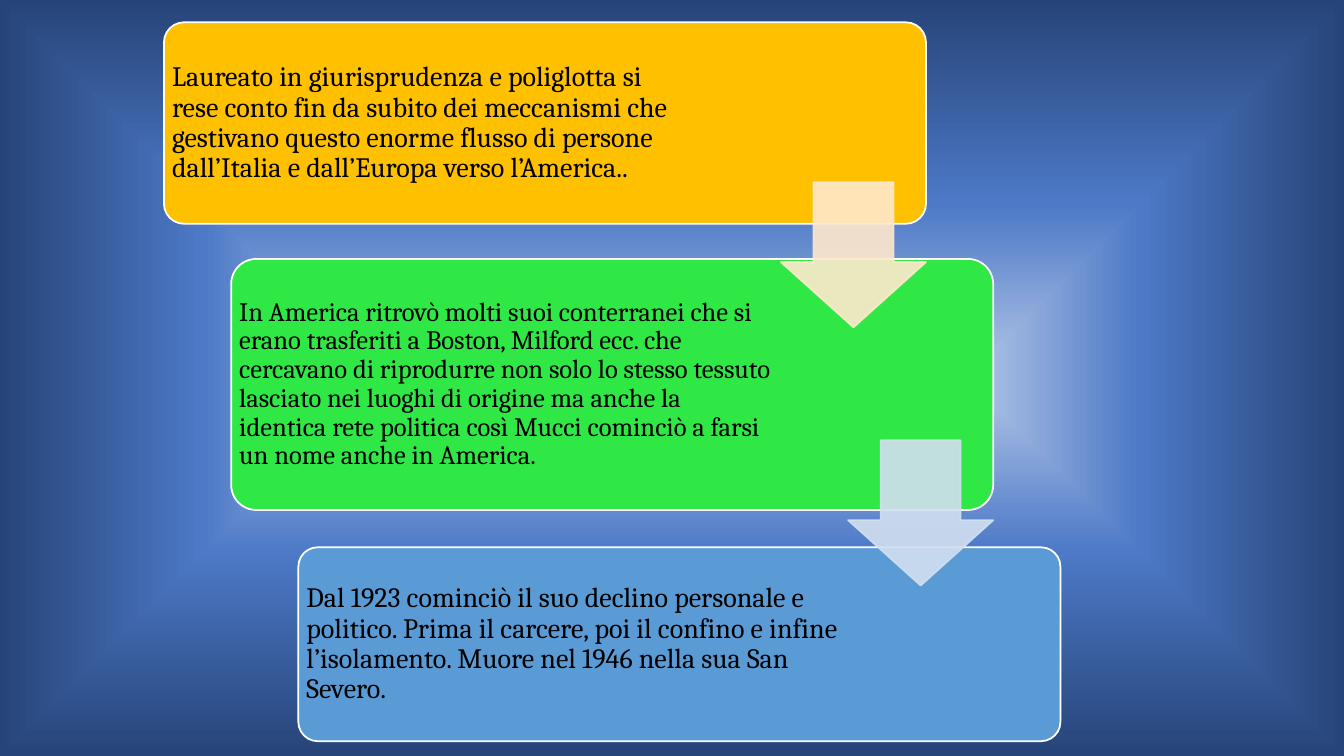
from lxml import etree
from pptx import Presentation
from pptx.dml.color import RGBColor
from pptx.enum.shapes import MSO_SHAPE
from pptx.enum.text import MSO_ANCHOR, PP_ALIGN
from pptx.oxml import parse_xml
from pptx.oxml.ns import nsdecls, qn
from pptx.util import Inches, Pt

ROUNDED = MSO_SHAPE.ROUNDED_RECTANGLE
DOWN_ARROW = MSO_SHAPE.DOWN_ARROW
MIDDLE = MSO_ANCHOR.MIDDLE
LEFT = PP_ALIGN.LEFT

BLACK = RGBColor(0x00, 0x00, 0x00)
WHITE = RGBColor(0xFF, 0xFF, 0xFF)
AMBER = RGBColor(0xFF, 0xC0, 0x00)
GREEN = RGBColor(0x30, 0xE8, 0x45)
BLUE = RGBColor(0x5B, 0x9B, 0xD5)
CREAM = RGBColor(0xFF, 0xE8, 0xCC)
PALE_BLUE = RGBColor(0xD2, 0xDF, 0xF0)
GLOW = RGBColor(0xB4, 0xC7, 0xE7)
MID_BLUE = RGBColor(0x4D, 0x79, 0xC7)
NAVY = RGBColor(0x26, 0x44, 0x78)

# Percentages of the slide's width (horizontal) or height (vertical)
FIRST_LEFT, STEP = 12.2, 5
BOX_WIDTH = 56.7
ARROW_WIDTH, ARROW_HEIGHT = 10.8, 19.2

# Top, height, text width, font size, fill, text
BOXES = [
    (2.95, 26.65, 39.75, 20, AMBER,
     "Laureato in giurisprudenza e poliglotta si rese conto fin da subito dei "
     "meccanismi che gestivano questo enorme flusso di persone dall’Italia e "
     "dall’Europa verso l’America.."),
    (34.25, 33.2, 40.9, 19, GREEN,
     "In America ritrovò molti suoi conterranei che si erano trasferiti a "
     "Boston, Milford ecc. che cercavano di riprodurre non solo lo stesso "
     "tessuto lasciato nei luoghi di origine ma anche la identica rete politica "
     "così Mucci cominciò a farsi un nome anche in America."),
    (72.4, 25.65, 40.9, 20, BLUE,
     "Dal 1923 cominciò il suo declino personale e politico. Prima il carcere, "
     "poi il confino e infine l’isolamento. Muore nel 1946 nella sua San Severo."),
]
# Top, colour
ARROWS = [(24.1, CREAM), (58.25, PALE_BLUE)]


class Deck:
    font = "Cambria"
    line_width = Pt(1.25)
    inset = Inches(0.08)

    def __init__(self, prs):
        self.prs = prs
        self.slide = prs.slides.add_slide(prs.slide_layouts[6])

    def area(self, left, top, width, height):
        w, h = self.prs.slide_width / 100, self.prs.slide_height / 100
        return [int(v) for v in (left * w, top * h, width * w, height * h)]

    def background(self, stops):
        self.slide.background.fill.solid()
        solid = next(self.slide.element.iter(qn("a:solidFill")))
        gs = "".join(f'<a:gs pos="{pos * 1000}"><a:srgbClr val="{color}"/></a:gs>'
                     for pos, color in stops)
        solid.getparent().replace(solid, parse_xml(
            f'<a:gradFill {nsdecls("a")} rotWithShape="1"><a:gsLst>{gs}</a:gsLst>'
            '<a:path path="shape"><a:fillToRect l="50000" t="50000" r="50000" '
            'b="50000"/></a:path></a:gradFill>'))

    def shape(self, kind, area, fill, line, adjustments, opacity=100):
        sp = self.slide.shapes.add_shape(kind, *self.area(*area))
        sp.shadow.inherit = False
        for i, value in enumerate(adjustments):
            sp.adjustments[i] = value
        sp.fill.solid()
        sp.fill.fore_color.rgb = fill
        sp.line.color.rgb = line
        sp.line.width = self.line_width
        if opacity < 100:
            for color in sp.element.spPr.iter(qn("a:srgbClr")):
                etree.SubElement(color, qn("a:alpha"), val=str(opacity * 1000))

    def text(self, area, text, size):
        tf = self.slide.shapes.add_textbox(*self.area(*area)).text_frame
        tf.word_wrap = True
        tf.vertical_anchor = MIDDLE
        tf.margin_left = tf.margin_right = self.inset
        tf.margin_top = tf.margin_bottom = self.inset
        p = tf.paragraphs[0]
        p.text = text
        p.alignment = LEFT
        p.line_spacing = 0.9
        p.font.name = self.font
        p.font.size = Pt(size)
        p.font.color.rgb = BLACK


def main():
    prs = Presentation()
    prs.slide_width, prs.slide_height = Inches(13.33), Inches(7.5)
    deck = Deck(prs)
    deck.background([(0, GLOW), (46, MID_BLUE), (100, NAVY)])

    # Staggered boxes
    for i, (top, height, text_width, size, color, text) in enumerate(BOXES):
        left = FIRST_LEFT + i * STEP
        deck.shape(ROUNDED, (left, top, BOX_WIDTH, height), color, WHITE, [0.1])
        deck.text((left, top, text_width, height), text, size)

    # Arrows, flush with the right edge of the box they leave
    for i, (top, color) in enumerate(ARROWS):
        left = FIRST_LEFT + i * STEP + BOX_WIDTH - ARROW_WIDTH
        deck.shape(DOWN_ARROW, (left, top, ARROW_WIDTH, ARROW_HEIGHT),
                   color, color, [0.55, 0.45], opacity=90)

    prs.save("out.pptx")


if __name__ == "__main__":
    main()
